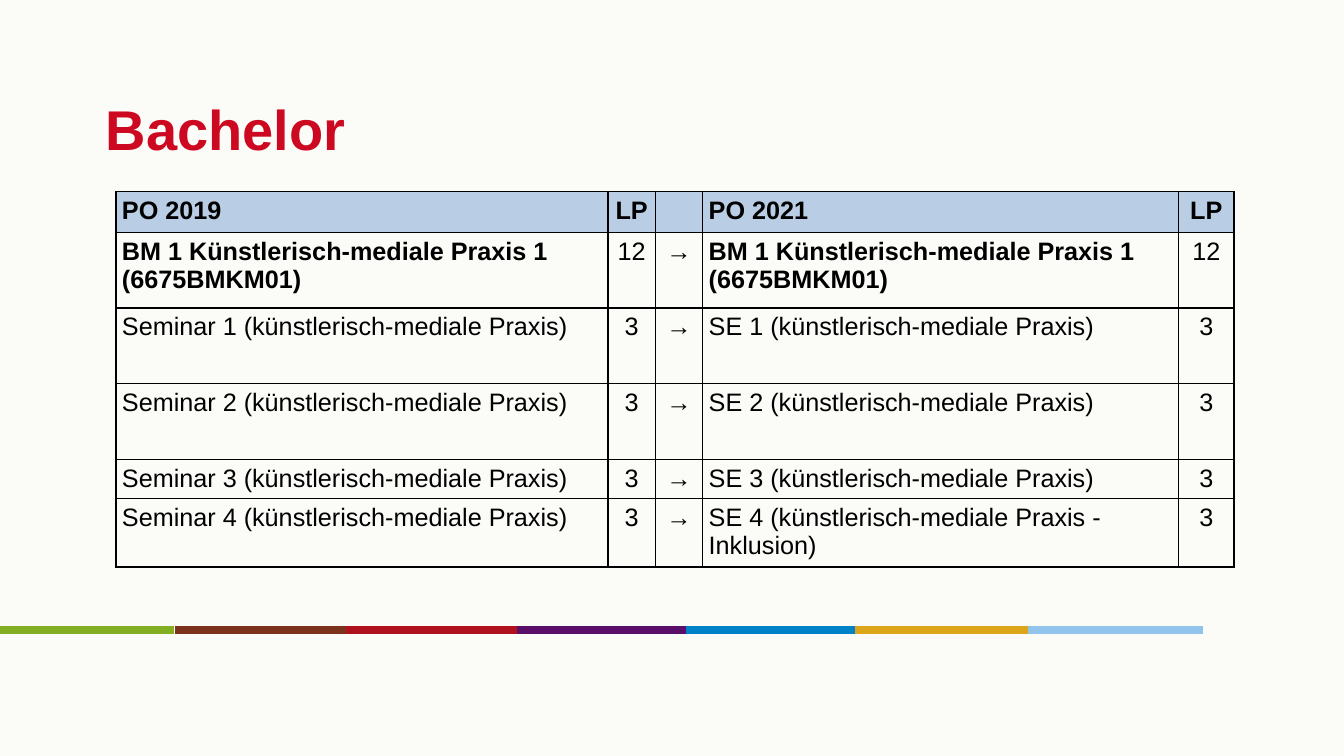
from lxml.etree import SubElement
from pptx import Presentation
from pptx.dml.color import RGBColor
from pptx.enum.shapes import MSO_CONNECTOR
from pptx.enum.text import MSO_ANCHOR, PP_ALIGN
from pptx.oxml.ns import qn
from pptx.util import Pt

SCALE = 9144
FONT = "Arial"
BACKGROUND, RED, BLACK, HEADER_BLUE = "FBFCF8", "CD0921", "000000", "B9CDE5"
COLUMN_WIDTHS = [488, 47, 47, 472, 55]
ROW_HEIGHTS = [39, 75, 75, 75, 39, 68]
COURSES = [
    ("PO 2019", "LP", "", "PO 2021", "LP"),
    ("BM 1 Künstlerisch-mediale Praxis 1 (6675BMKM01)", "12", "→",
     "BM 1 Künstlerisch-mediale Praxis 1 (6675BMKM01)", "12"),
    ("Seminar 1 (künstlerisch-mediale Praxis)", "3", "→",
     "SE 1 (künstlerisch-mediale Praxis)", "3"),
    ("Seminar 2 (künstlerisch-mediale Praxis)", "3", "→",
     "SE 2 (künstlerisch-mediale Praxis)", "3"),
    ("Seminar 3 (künstlerisch-mediale Praxis)", "3", "→",
     "SE 3 (künstlerisch-mediale Praxis)", "3"),
    ("Seminar 4 (künstlerisch-mediale Praxis)", "3", "→",
     "SE 4 (künstlerisch-mediale Praxis - Inklusion)", "3"),
]
STRIPES = [(0, "83AF23"), (174, "7D321D"), (343, "AF111D"), (513, "590F68"),
           (680, "0082C6"), (848, "DBA619"), (1020, "91C4EA")]


def px(length):
    """Turn a length in px into EMU."""
    return length * SCALE


def color(value):
    """Turn a hex string into a colour."""
    return RGBColor.from_string(value)


def write_text(text_frame, text, size=18, fill=BLACK, bold=False, align=PP_ALIGN.LEFT):
    """Write one formatted paragraph into a text frame."""
    text_frame.word_wrap = True
    paragraph = text_frame.paragraphs[0]
    paragraph.alignment = align
    paragraph.font.size = Pt(size)
    if text:
        run = paragraph.add_run()
        run.text = text
        run.font.name, run.font.size, run.font.bold = FONT, Pt(size), bold
        run.font.color.rgb = color(fill)


def add_borders(cell):
    """Draw a thin black border on all four sides of a cell."""
    properties = cell._tc.get_or_add_tcPr()
    for position, side in enumerate(("a:lnL", "a:lnR", "a:lnT", "a:lnB")):
        line = SubElement(properties, qn(side), w=str(Pt(1)))
        fill = SubElement(line, qn("a:solidFill"))
        SubElement(fill, qn("a:srgbClr"), val=BLACK)
        properties.insert(position, line)


def place_title(slide, left, top, width, height):
    """Move and format the title placeholder."""
    title = slide.shapes.title
    title.left, title.top, title.width, title.height = map(px, (left, top, width, height))
    frame = title.text_frame
    frame.vertical_anchor = MSO_ANCHOR.MIDDLE
    frame.margin_left = frame.margin_right = frame.margin_top = frame.margin_bottom = px(5)
    write_text(frame, "Bachelor", size=40, fill=RED, bold=True)


def add_course_table(slide, left, top):
    """Add the table that maps the old courses to the new ones."""
    table = slide.shapes.add_table(
        len(COURSES), len(COLUMN_WIDTHS), px(left), px(top),
        px(sum(COLUMN_WIDTHS)), px(sum(ROW_HEIGHTS))).table
    table.horz_banding = False
    for column, width in zip(table.columns, COLUMN_WIDTHS):
        column.width = px(width)
    for row_index, (row, height, texts) in enumerate(zip(table.rows, ROW_HEIGHTS, COURSES)):
        row.height = px(height)
        for column_index, (cell, text) in enumerate(zip(row.cells, texts)):
            is_header, is_course = row_index == 0, column_index in (0, 3)
            cell.margin_left = cell.margin_right = px(6)
            cell.margin_top = cell.margin_bottom = px(5)
            if is_header:
                cell.fill.solid()
                cell.fill.fore_color.rgb = color(HEADER_BLUE)
            else:
                cell.fill.background()
            add_borders(cell)
            write_text(cell.text_frame, text,
                       bold=is_header or (row_index == 1 and is_course),
                       align=PP_ALIGN.LEFT if is_course else PP_ALIGN.CENTER)


def add_stripes(slide, left, top, length):
    """Add the row of coloured stripes."""
    for offset, stripe_color in STRIPES:
        start = left + offset
        stripe = slide.shapes.add_connector(
            MSO_CONNECTOR.STRAIGHT, px(start), px(top), px(start + length), px(top))
        stripe.line.color.rgb = color(stripe_color)
        stripe.line.width = Pt(5.5)
        SubElement(stripe._element.spPr, qn("a:effectLst"))


def main():
    """Build and save the slide."""
    presentation = Presentation()
    presentation.slide_width, presentation.slide_height = px(1333), px(750)
    slide = presentation.slides.add_slide(presentation.slide_layouts[5])
    slide.background.fill.solid()
    slide.background.fill.fore_color.rgb = color(BACKGROUND)
    add_stripes(slide, 0, 625, 173)
    place_title(slide, 100, 65, 1133, 125)
    add_course_table(slide, 115, 190)
    presentation.save("out.pptx")


if __name__ == "__main__":
    main()
